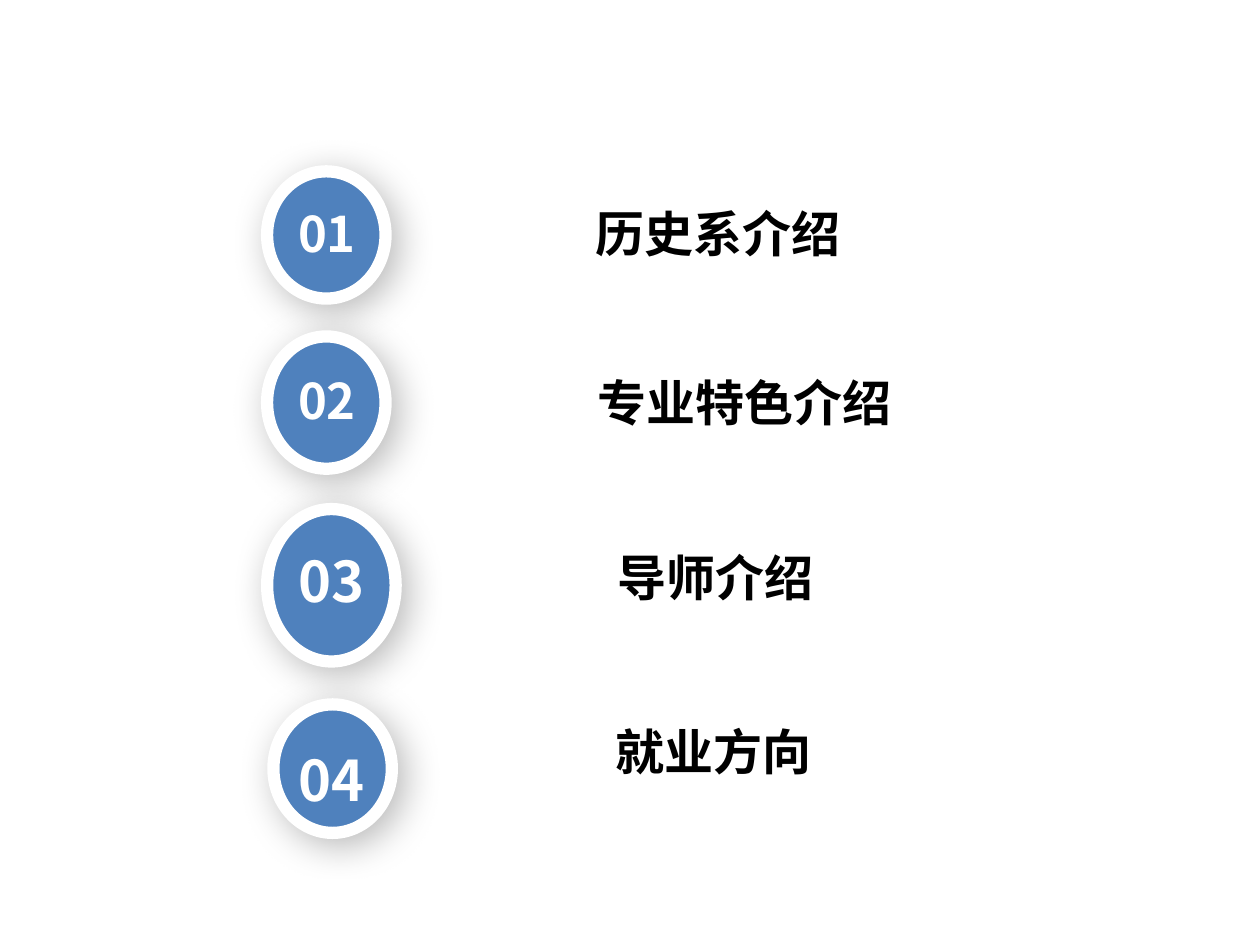
from pptx import Presentation
from pptx.dml.color import RGBColor as RGB
from pptx.enum.shapes import MSO_SHAPE as Shape
from pptx.enum.text import MSO_AUTO_SIZE as Fit, PP_ALIGN as Align
from pptx.oxml import parse_xml
from pptx.oxml.ns import nsdecls, qn
from pptx.util import Inches, Pt

COLORS = {"text": "000000", "disc": "4F81BD", "white": "FFFFFF"}
FONT = "Noto Sans CJK SC"
SHADOW = f"""<a:effectLst {nsdecls('a')}>
  <a:outerShdw blurRad="{Pt(22)}" dist="{Pt(6)}" dir="{45 * 60000}" algn="tl" rotWithShape="0">
    <a:srgbClr val="000000"><a:alpha val="28000"/></a:srgbClr>
  </a:outerShdw>
</a:effectLst>"""


class Deck:
    """Holds the style and the current slide."""

    def __init__(self, wide, high):
        self.prs = Presentation()
        self.prs.slide_width = Inches(wide)
        self.prs.slide_height = Inches(high)
        self.slide = self.prs.slides.add_slide(self.prs.slide_layouts[6])

    def color(self, name):
        return RGB.from_string(COLORS[name])

    def group(self):
        return self.slide.shapes.add_group_shape().shapes

    def label(self, home, at, text, size, color):
        frame = home.add_textbox(*map(Inches, at)).text_frame
        frame.word_wrap = True
        frame.auto_size = Fit.SHAPE_TO_FIT_TEXT
        par = frame.paragraphs[0]
        par.text = text
        par.alignment = Align.CENTER
        font = par.font
        font.size, font.bold = Pt(size), True
        font.color.rgb = self.color(color)
        font.name = FONT
        # East Asian glyphs take their own typeface entry
        props = par._p.get_or_add_pPr().find(qn("a:defRPr"))
        props.append(parse_xml(f'<a:ea {nsdecls("a")} typeface="{FONT}"/>'))

    def disc(self, home, at):
        oval = home.add_shape(Shape.OVAL, *map(Inches, at))
        oval.fill.solid()
        oval.fill.fore_color.rgb = self.color("disc")
        oval.line.color.rgb = self.color("white")
        oval.line.width = Pt(7)
        oval._element.spPr.append(parse_xml(SHADOW))


# Topic, its box, disc box, number box, number size, grouped or not
ITEMS = [
    ("历史系介绍", (3.49, 1.57, 4.42, 0.57),
     (2.12, 1.36, 0.94, 1.01), (2.24, 1.57, 0.71, 0.57), 28, True),
    ("专业特色介绍", (3.14, 2.91, 5.54, 0.57),
     (2.12, 2.67, 0.94, 1.05), (2.24, 2.89, 0.71, 0.57), 28, True),
    ("导师介绍", (3.77, 4.3, 3.82, 0.57),
     (2.12, 4.04, 1.02, 1.21), (2.25, 4.29, 0.77, 0.64), 32, True),
    ("就业方向", (3.6, 5.68, 4.12, 0.57),
     (2.17, 5.59, 0.94, 1.02), (2.2, 5.87, 0.86, 0.64), 32, False),
]


def main():
    deck = Deck(10, 7.5)
    page = deck.slide.shapes

    # Topics
    for topic, box, *_ in ITEMS:
        deck.label(page, box, topic, 28, "text")

    # Numbered discs
    for num, (_, _, disc, box, size, joined) in enumerate(ITEMS, 1):
        home = deck.group() if joined else page
        deck.disc(home, disc)
        deck.label(home, box, f"{num:02}", size, "white")

    deck.prs.save("out.pptx")


if __name__ == "__main__":
    main()
